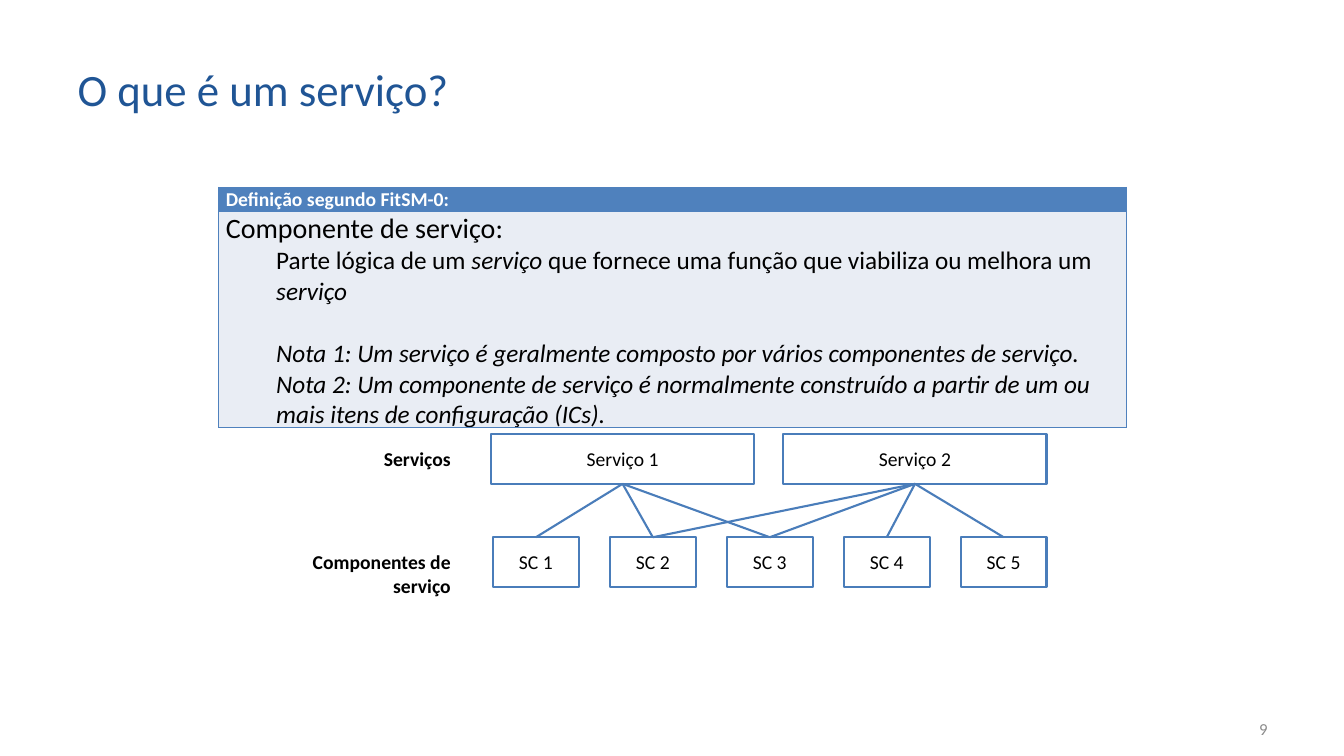
from lxml import etree
from pptx import Presentation
from pptx import util as u
from pptx.dml.color import RGBColor
from pptx.enum import shapes, text
from pptx.oxml.ns import qn

PX = 9144
BLUE, LINE, BLACK, WHITE = "4F81BD", "4A7DBA", "000000", "FFFFFF"
LEFT, CENTER, RIGHT = text.PP_ALIGN.LEFT, text.PP_ALIGN.CENTER, text.PP_ALIGN.RIGHT
TOP, MIDDLE = text.MSO_ANCHOR.TOP, text.MSO_ANCHOR.MIDDLE

DEFINITION = [
    (20, 0, 0, [("Componente de serviço:", False)]),
    (18, 50, 0, [("Parte lógica de um ", False), ("serviço ", True),
                 ("que fornece uma função que viabiliza ou melhora um ", False),
                 ("serviço", True)]),
    (18, 50, 22, [("Nota 1: Um serviço é geralmente composto por vários "
                   "componentes de serviço.", True)]),
    (18, 50, 0, [("Nota 2: Um componente de serviço é normalmente construído a "
                  "partir de um ou mais itens de configuração (ICs).", True)]),
]
LINKS = [(1, 1), (2, 1), (3, 1), (3, 2), (2, 2), (4, 2), (5, 2)]


def rgb(value):
    return RGBColor.from_string(value)


def px(*values):
    return [u.Emu(v * PX) for v in values]


def apply(target, values):
    for name, value in values.items():
        setattr(target, name, value)


def add_run(p, words, size, color, **values):
    r = p.add_run()
    r.text = words
    apply(r.font, {"name": "Calibri", "size": u.Pt(size), **values})
    r.font.color.rgb = rgb(color)


def write(tf, words, size, color, align, anchor=TOP, **values):
    apply(tf, {"word_wrap": True, "vertical_anchor": anchor})
    p = tf.paragraphs[0]
    p.alignment = align
    add_run(p, words, size, color, **values)


def add_label(s, box, words, size, color, anchor=TOP, **values):
    sp = s.shapes.add_textbox(*px(*box))
    write(sp.text_frame, words, size, color, RIGHT, anchor, **values)


def add_box(s, box, words):
    sp = s.shapes.add_shape(shapes.MSO_SHAPE.RECTANGLE, *px(*box))
    sp.shadow.inherit = False
    sp.fill.background()
    sp.line.color.rgb = rgb(LINE)
    sp.line.width = u.Pt(1.5)
    write(sp.text_frame, words, 14, BLACK, CENTER, MIDDLE)
    return sp


def add_link(s, component, service):
    line = s.shapes.add_connector(shapes.MSO_CONNECTOR.STRAIGHT, 0, 0, 0, 0)
    line.begin_connect(component, 0)
    line.end_connect(service, 2)
    line.line.color.rgb = rgb(LINE)
    line.line.width = u.Pt(1.5)
    etree.SubElement(line.element.spPr, qn("a:effectLst"))


def style_cell(cell, fill):
    margin, = px(7)
    apply(cell, {"margin_left": margin, "margin_right": margin,
                 "margin_top": 0, "margin_bottom": 0})
    tcPr = cell._tc.get_or_add_tcPr()
    for side in ("lnL", "lnR", "lnT", "lnB"):
        ln = etree.SubElement(tcPr, qn("a:" + side), w=str(u.Pt(1)))
        solid = etree.SubElement(ln, qn("a:solidFill"))
        etree.SubElement(solid, qn("a:srgbClr"), val=BLUE)
    cell.fill.solid()
    cell.fill.fore_color.rgb = rgb(fill)


def add_definition(s):
    table = s.shapes.add_table(2, 1, *px(217, 186, 900, 237)).table
    apply(table, {"first_row": False, "horz_banding": False})
    for row, height in zip(table.rows, px(24, 213)):
        row.height = height
    head, body = table.cell(0, 0), table.cell(1, 0)
    style_cell(head, BLUE)
    style_cell(body, "E9EDF4")
    add_run(head.text_frame.paragraphs[0], "Definição segundo FitSM-0:", 14, WHITE, bold=True)
    tf = body.text_frame
    for i, (size, indent, before, runs) in enumerate(DEFINITION):
        p = tf.add_paragraph() if i else tf.paragraphs[0]
        if indent:
            p._p.get_or_add_pPr().set("marL", str(indent * PX))
        if before:
            p.space_before = u.Pt(before)
        for words, italic in runs:
            add_run(p, words, size, BLACK, bold=False, italic=italic)


def add_title(s, words):
    title = s.shapes.title
    apply(title, dict(zip(("left", "top", "width", "height"), px(67, 30, 991, 115))))
    write(title.text_frame, words, 32, "205595", LEFT, MIDDLE)


def main():
    prs = Presentation()
    prs.slide_width, prs.slide_height = px(1333, 750)
    s = prs.slides.add_slide(prs.slide_layouts[5])
    add_title(s, "O que é um serviço?")
    add_label(s, (956, 703, 311, 40), "9", 12, "8C8C8C", MIDDLE)
    add_definition(s)
    services = [add_box(s, (487 + 290 * i, 431, 261, 49), f"Serviço {i + 1}")
                for i in range(2)]
    components = [add_box(s, (489 + 116 * i, 533, 85, 49), f"SC {i + 1}")
                  for i in range(5)]
    for component, service in LINKS:
        add_link(s, components[component - 1], services[service - 1])
    for top, words in ((438, "Serviços"), (541, "Componentes de serviço")):
        add_label(s, (271, top, 186, 34), words, 14, BLACK, bold=True)
    prs.save("out.pptx")


if __name__ == "__main__":
    main()
